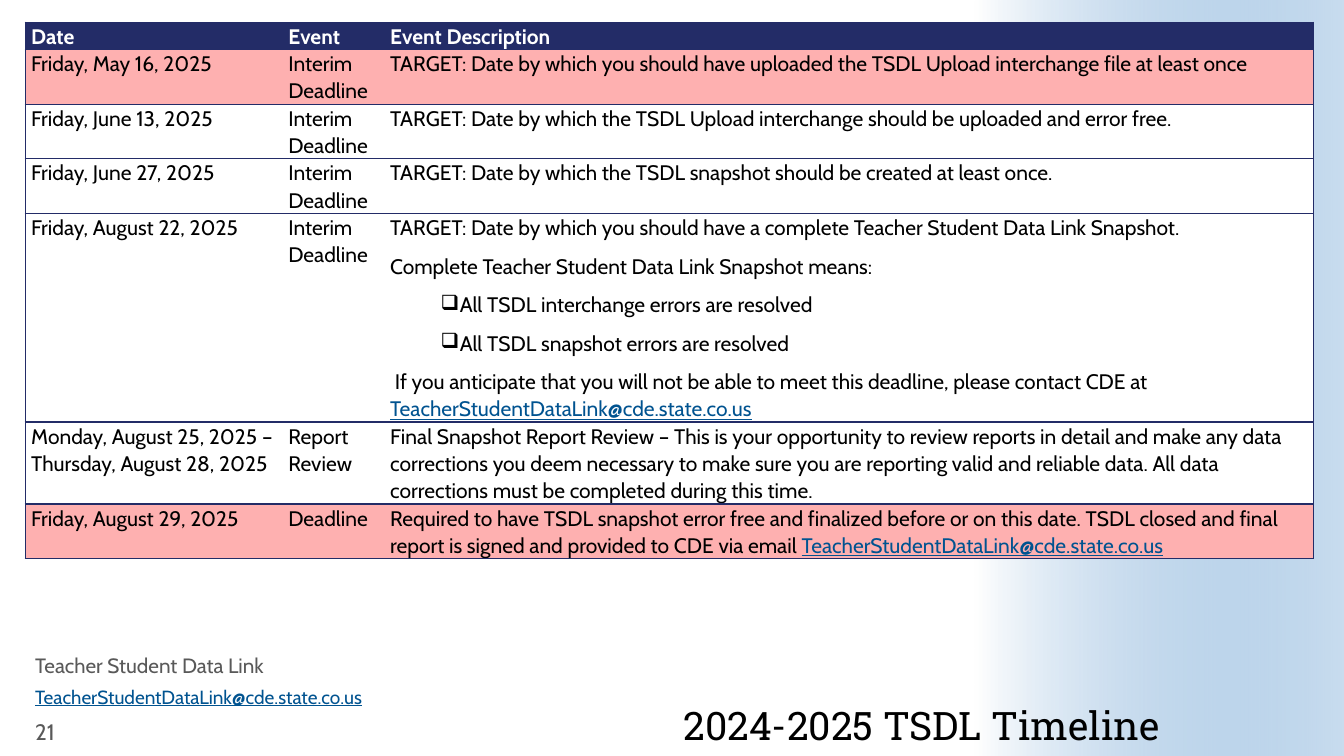
"""Build the 2024-2025 TSDL timeline slide."""
from dataclasses import dataclass

from lxml.etree import SubElement
from pptx import Presentation
from pptx.dml.color import RGBColor
from pptx.enum.shapes import MSO_SHAPE as Shape
from pptx.enum.text import MSO_ANCHOR as Anchor, PP_ALIGN as Align
from pptx.oxml import parse_xml
from pptx.oxml.ns import nsdecls, qn
from pptx.util import Inches, Pt

NAVY = RGBColor(0x23, 0x2C, 0x67)
PINK = RGBColor(0xFE, 0xB0, 0xB0)
WHITE = RGBColor(0xFF, 0xFF, 0xFF)
BLACK = RGBColor(0, 0, 0)
GREY = RGBColor(0x59, 0x59, 0x59)
LINK = RGBColor(0x00, 0x53, 0x90)
SKY = RGBColor(0x48, 0x8B, 0xC9)
EMAIL = "TeacherStudentDataLink@cde.state.co.us"
COLUMN_WIDTHS = (2.55, 1.01, 9.22)


@dataclass
class Event:
    date: str
    kind: str
    description: list[str]
    height: float = 0.54
    fill: RGBColor = WHITE
    color: RGBColor = BLACK
    bold: bool = False


@dataclass
class Label:
    text: str
    left: float
    top: float
    width: float
    height: float
    size: float
    color: RGBColor = GREY
    font: str = "Cabin"
    align: Align = Align.LEFT
    anchor: Anchor = Anchor.TOP
    spacing: float = 0.8
    margin: tuple[float, float] = (0.1, 0.05)


EVENTS = [
    Event("Date", "Event", ["Event Description"], 0.27, NAVY, WHITE, True),
    Event("Friday, May 16, 2025", "Interim Deadline",
          ["TARGET: Date by which you should have uploaded the TSDL Upload interchange file at least once"],
          fill=PINK),
    Event("Friday, June 13, 2025", "Interim Deadline",
          ["TARGET: Date by which the TSDL Upload interchange should be uploaded and error free."]),
    Event("Friday, June 27, 2025", "Interim Deadline",
          ["TARGET: Date by which the TSDL snapshot should be created at least once."]),
    Event("Friday, August 22, 2025", "Interim Deadline",
          ["TARGET: Date by which you should have a complete Teacher Student Data Link Snapshot.",
           "Complete Teacher Student Data Link Snapshot means:",
           "❑All TSDL interchange errors are resolved",
           "❑All TSDL snapshot errors are resolved",
           " If you anticipate that you will not be able to meet this deadline, "
           f"please contact CDE at {EMAIL}"], 2.07),
    Event("Monday, August 25, 2025 – Thursday, August 28, 2025", "Report Review",
          ["Final Snapshot Report Review – This is your opportunity to review reports in detail and make any "
           "data corrections you deem necessary to make sure you are reporting valid and reliable data. "
           "All data corrections must be completed during this time."], 0.81),
    Event("Friday, August 29, 2025", "Deadline",
          ["Required to have TSDL snapshot error free and finalized before or on this date. TSDL closed and "
           f"final report is signed and provided to CDE via email {EMAIL}"], fill=PINK),
]

LABELS = [
    Label("2024-2025 TSDL Timeline", 4.26, 6.45, 7.24, 0.98, 28, BLACK, "Roboto Slab",
          Align.RIGHT, Anchor.BOTTOM, 0.9, (0, 0)),
    Label("21", 0.25, 7.1, 0.85, 0.31, 16, anchor=Anchor.MIDDLE, spacing=1),
    Label("Teacher Student Data Link", 0.25, 6.47, 3.89, 0.31, 14.8),
    Label(EMAIL, 0.25, 6.79, 3.89, 0.31, 13.6),
]


def write(para, text: str, *, size: float, color: RGBColor, font: str = "Cabin",
          bold: bool = False, spacing: float = 1.07, after: float = 0,
          align: Align = Align.LEFT) -> None:
    """Fill a paragraph, setting the e-mail address as a link and the box mark as a bullet."""
    if text.startswith("❑"):
        text = text[1:]
        props = para._p.get_or_add_pPr()
        props.set("marL", str(Inches(0.69)))
        props.set("indent", str(Inches(-0.19)))
        SubElement(props, qn("a:buChar")).set("char", "❑")
    para.line_spacing, para.space_after, para.alignment = spacing, Pt(after), align
    before, address, _ = text.partition(EMAIL)
    for part in filter(None, (before, address)):
        span = para.add_run()
        span.text = part
        span.font.size, span.font.name, span.font.bold = Pt(size), font, bold
        span.font.color.rgb = LINK if part == EMAIL else color
        span.font.underline = part == EMAIL


def set_borders(cell, sides: str) -> None:
    """Draw navy lines on the given sides and clear the others."""
    props = cell._tc.get_or_add_tcPr()
    for index, side in enumerate("LRTB"):
        paint = f'<a:solidFill><a:srgbClr val="{NAVY}"/></a:solidFill>' if side in sides else "<a:noFill/>"
        line = parse_xml(f'<a:ln{side} {nsdecls("a")} w="{Pt(1)}">{paint}</a:ln{side}>')
        props.insert(index, line)


def add_gradient(page) -> None:
    """Add the blue fade along the right edge."""
    band = page.shapes.add_shape(Shape.RECTANGLE, Inches(7.75), Inches(1.92), Inches(7.5), Inches(3.66))
    band.rotation = 270
    band.shadow.inherit = False
    band.line.fill.background()
    band.fill.gradient()
    band.fill.gradient_angle = 270
    for stop, color, position in zip(band.fill.gradient_stops, (WHITE, SKY), (0, 1)):
        stop.color.rgb, stop.position = color, position
    sky_stop = list(band._element.iter(qn("a:srgbClr")))[-1]
    SubElement(sky_stop, qn("a:alpha")).set("val", "30000")


def add_timeline(page) -> None:
    """Add the table of deadlines."""
    height = sum(event.height for event in EVENTS)
    table = page.shapes.add_table(len(EVENTS), len(COLUMN_WIDTHS), Inches(0.25), Inches(0.22),
                                  Inches(sum(COLUMN_WIDTHS)), Inches(height)).table
    table.first_row = table.horz_banding = False
    for column, width in zip(table.columns, COLUMN_WIDTHS):
        column.width = Inches(width)
    for row, event in zip(table.rows, EVENTS):
        row.height = Inches(event.height)
        contents = ([event.date], [event.kind], event.description)
        for cell, lines, sides in zip(row.cells, contents, ("LTB", "TB", "RTB")):
            cell.margin_left = cell.margin_right = Inches(0.06)
            cell.margin_top = cell.margin_bottom = 0
            cell.fill.solid()
            cell.fill.fore_color.rgb = event.fill
            set_borders(cell, sides)
            for index, line in enumerate(lines):
                para = cell.text_frame.add_paragraph() if index else cell.text_frame.paragraphs[0]
                write(para, line, size=15, color=event.color, bold=event.bold, after=8)


def add_label(page, label: Label) -> None:
    """Add one text box."""
    box = page.shapes.add_textbox(*map(Inches, (label.left, label.top, label.width, label.height)))
    frame = box.text_frame
    frame.word_wrap, frame.vertical_anchor = True, label.anchor
    frame.margin_left = frame.margin_right = Inches(label.margin[0])
    frame.margin_top = frame.margin_bottom = Inches(label.margin[1])
    write(frame.paragraphs[0], label.text, size=label.size, color=label.color, font=label.font,
          spacing=label.spacing, align=label.align)


def main() -> None:
    """Build and save the deck."""
    deck = Presentation()
    deck.slide_width, deck.slide_height = Inches(13.33), Inches(7.5)
    page = deck.slides.add_slide(deck.slide_layouts[6])
    add_gradient(page)
    add_timeline(page)
    for label in LABELS:
        add_label(page, label)
    deck.save("out.pptx")


if __name__ == "__main__":
    main()
